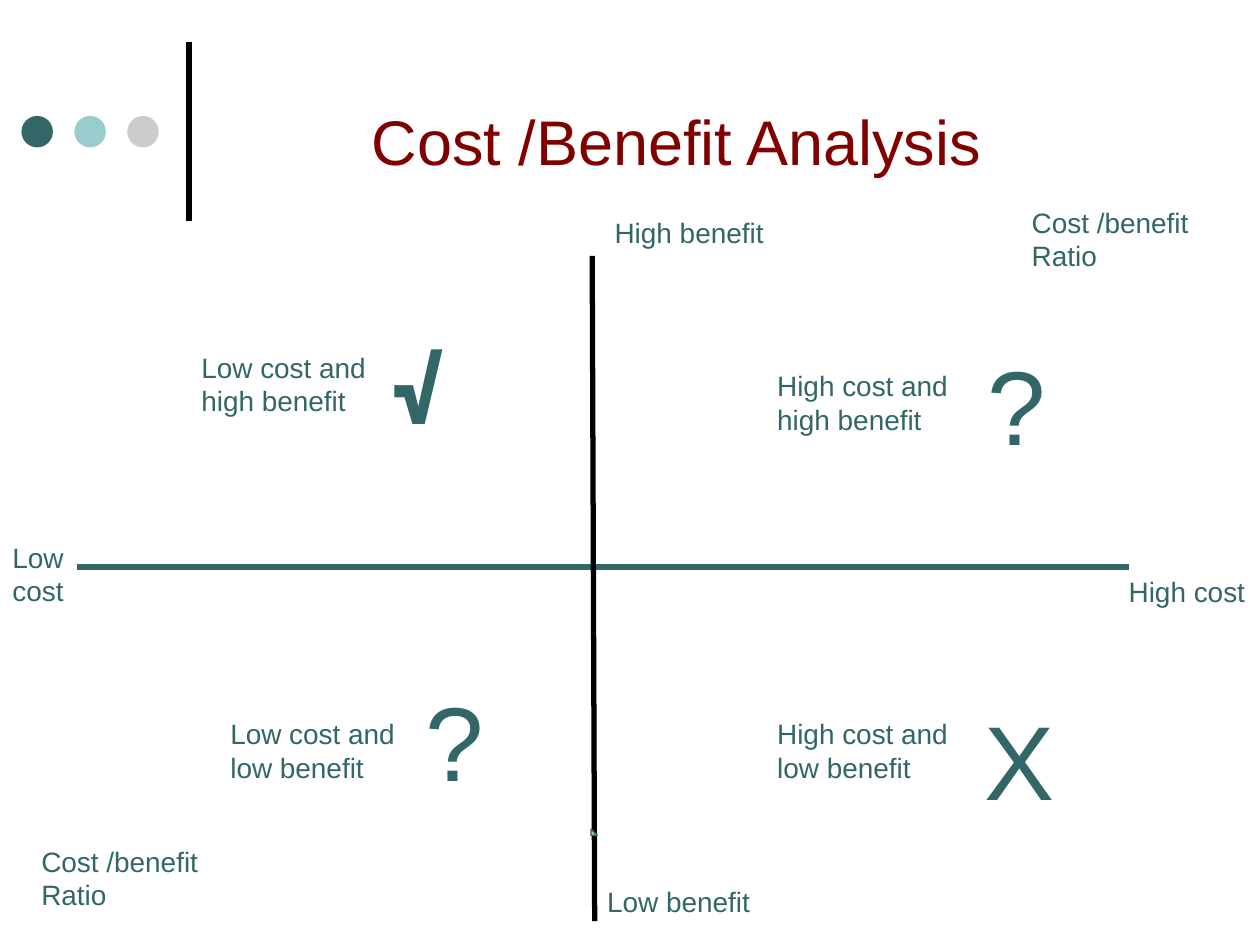
import pptx
import pptx.dml.color
import pptx.enum.shapes
import pptx.enum.text
import pptx.oxml
import pptx.util

Inches = pptx.util.Inches
SHAPE = pptx.enum.shapes.MSO_SHAPE
ALIGN = pptx.enum.text.PP_ALIGN

COLORS = {
    "teal": "336666",
    "aqua": "99CCCC",
    "gray": "CCCCCC",
    "black": "000000",
    "maroon": "800000",
}


def rgb(name):
    return pptx.dml.color.RGBColor.from_string(COLORS[name])


def write_text(s, lines, size, color="teal", font="Arial", bold=False,
               align=ALIGN.LEFT, wrap=False):
    """Fill a text shape with one paragraph per line."""
    tf = s.text_frame
    tf.word_wrap = wrap
    tf.auto_size = pptx.enum.text.MSO_AUTO_SIZE.NONE
    tf.vertical_anchor = pptx.enum.text.MSO_ANCHOR.TOP
    for i, line in enumerate(lines):
        p = tf.add_paragraph() if i else tf.paragraphs[0]
        p.alignment = align
        r = p.add_run()
        r.text = line
        r.font.size = pptx.util.Pt(size)
        r.font.name = font
        r.font.bold = bold
        r.font.color.rgb = rgb(color)


def add_text(slide, x, y, w, h, lines, size=16, **style):
    s = slide.shapes.add_textbox(Inches(x), Inches(y), Inches(w), Inches(h))
    write_text(s, lines, size, **style)


def add_title(slide, text):
    s = slide.shapes.title
    s.left, s.top = Inches(2.85), Inches(0.76)
    s.width, s.height = Inches(5.22), Inches(0.71)
    write_text(s, [text], 36, color="maroon")


def add_line(slide, x1, y1, x2, y2, color="black"):
    s = slide.shapes.add_connector(
        pptx.enum.shapes.MSO_CONNECTOR.STRAIGHT,
        Inches(x1), Inches(y1), Inches(x2), Inches(y2))
    s.line.color.rgb = rgb(color)
    s.line.width = pptx.util.Pt(3)
    s._element.spPr.append(pptx.oxml.parse_xml(
        '<a:effectLst xmlns:a='
        '"http://schemas.openxmlformats.org/drawingml/2006/main"/>'))


def add_solid(slide, kind, x, y, size, fill, outline=None):
    s = slide.shapes.add_shape(
        kind, Inches(x), Inches(y), Inches(size), Inches(size))
    s.shadow.inherit = False
    s.fill.solid()
    s.fill.fore_color.rgb = rgb(fill)
    if outline:
        s.line.color.rgb = rgb(outline)
        s.line.width = pptx.util.Pt(0.75)
    else:
        s.line.fill.background()


def add_header(slide):
    add_line(slide, 1.5, 1.75, 1.5, 0.33)
    for i, color in enumerate(("teal", "aqua", "gray")):
        add_solid(slide, SHAPE.OVAL, 0.17 + 0.42 * i, 0.92, 0.25, color)
    add_title(slide, "Cost /Benefit Analysis")


def add_axes(slide):
    add_line(slide, 0.61, 4.5, 8.96, 4.5, "teal")
    add_line(slide, 4.7, 2.03, 4.72, 7.31)
    add_solid(slide, SHAPE.RIGHT_TRIANGLE, 4.69, 6.58, 0.05, "aqua", "teal")
    add_text(slide, 0, 4.24, 1.01, 0.64, ["Low cost"], wrap=True)
    add_text(slide, 8.86, 4.51, 1.14, 0.37, ["High cost"])
    add_text(slide, 4.78, 1.66, 1.4, 0.37, ["High benefit"])
    add_text(slide, 4.72, 6.97, 1.35, 0.37, ["Low benefit"])


def add_quadrants(slide):
    for x, y, cost, benefit in ((1.5, 2.73, "Low", "high"),
                                (6.07, 2.88, "High", "high"),
                                (1.73, 5.64, "Low", "low"),
                                (6.07, 5.64, "High", "low")):
        add_text(slide, x, y, 1.64, 0.64,
                 [f"{cost} cost and", f"{benefit} benefit"])
    for x, y in ((8.09, 1.58), (0.23, 6.65)):
        add_text(slide, x, y, 1.46, 0.64, ["Cost /benefit", "Ratio"])


def add_verdicts(slide):
    add_text(slide, 3.02, 2.49, 0.6, 1.11, ["√"], 60,
             font="Roboto Condensed", bold=True, align=ALIGN.CENTER)
    add_text(slide, 7.71, 5.47, 0.76, 1.11, ["X"], 60, align=ALIGN.CENTER)
    for x, y in ((7.74, 2.65), (3.28, 5.32)):
        add_text(slide, x, y, 0.67, 1.11, ["?"], 60)


def main():
    prs = pptx.Presentation()
    prs.slide_width, prs.slide_height = Inches(10), Inches(7.5)
    slide = prs.slides.add_slide(prs.slide_layouts.get_by_name("Title Only"))
    add_header(slide)
    add_axes(slide)
    add_quadrants(slide)
    add_verdicts(slide)
    prs.save("out.pptx")


if __name__ == "__main__":
    main()
